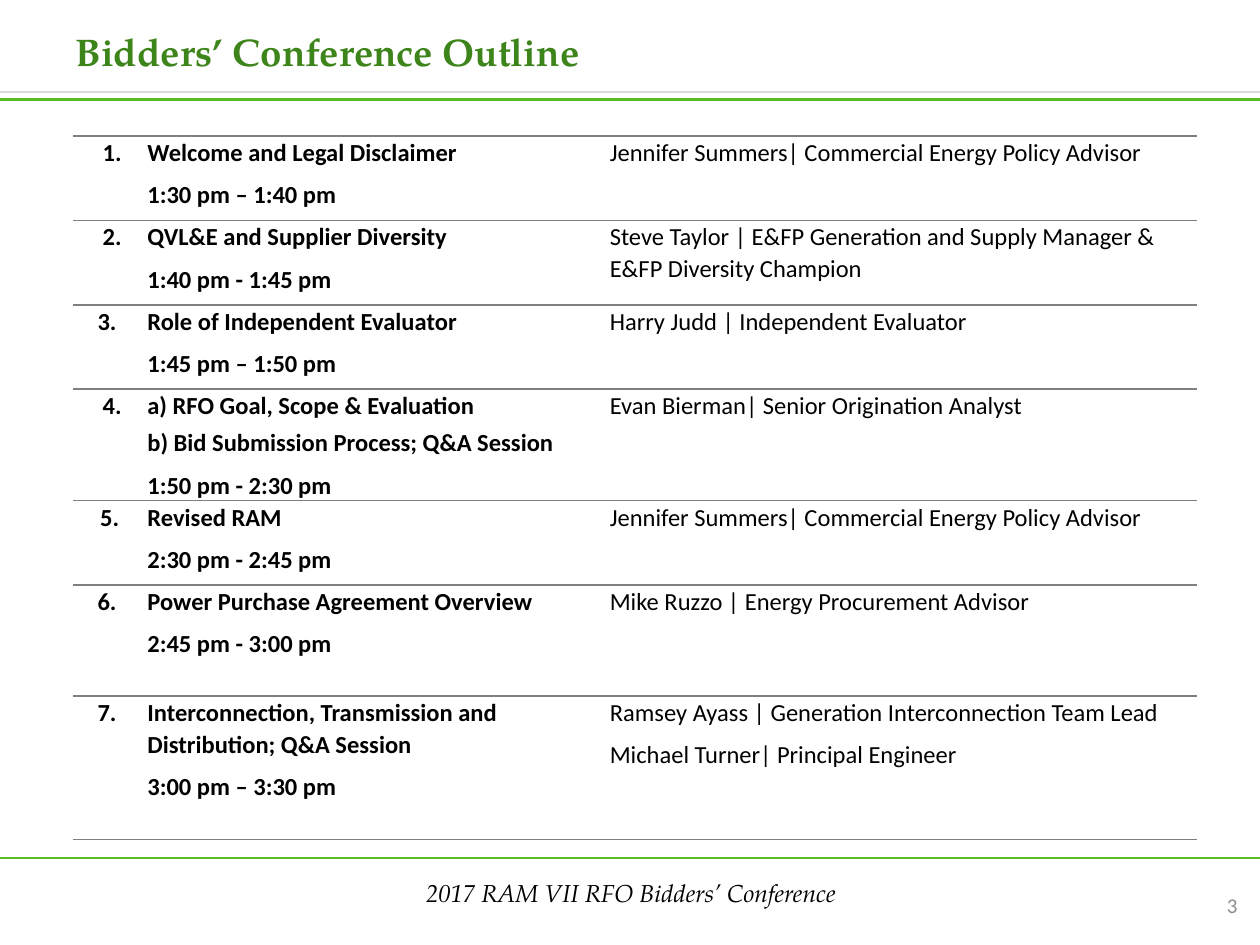
from typing import Any, NamedTuple

from lxml import etree
from pptx import Presentation
from pptx.dml.color import RGBColor
from pptx.enum.shapes import MSO_CONNECTOR
from pptx.enum.text import MSO_ANCHOR, MSO_AUTO_SIZE, PP_ALIGN
from pptx.oxml.ns import qn
from pptx.util import Inches, Pt

STRAIGHT = MSO_CONNECTOR.STRAIGHT
TOP, MIDDLE = MSO_ANCHOR.TOP, MSO_ANCHOR.MIDDLE
LEFT, CENTER, RIGHT = PP_ALIGN.LEFT, PP_ALIGN.CENTER, PP_ALIGN.RIGHT
NO_FIT = MSO_AUTO_SIZE.NONE

WIDTH, HEIGHT = Inches(10), Inches(7.5)
COLORS = {
    "title": "3D841A", "green": "58BD25", "silver": "D9D9D9",
    "rule": "7F7F7F", "number": "8C8C8C", "text": "000000",
}
SERIF, SANS = "TeX Gyre Pagella", "Calibri"
NO_STYLE = "{2D5ABB26-0587-4C30-8999-92F81FD0307C}"
TITLE = {"name": SERIF, "size": Pt(22), "bold": True, "italic": False}
FOOTER = {"name": SERIF, "size": Pt(14), "bold": False, "italic": True}
PAGE_NUMBER = {"name": SANS, "size": Pt(12), "bold": False}
STRONG = {"name": SANS, "size": Pt(14), "bold": True}
PLAIN = {**STRONG, "bold": False}


class Line(NamedTuple):
    text: str
    before: float = 3


class Session(NamedTuple):
    number: str
    nudge: float  # inches the number sits right of its column's centre
    height: float
    agenda: list[Line]
    speakers: list[Line]


class Rule(NamedTuple):
    top: float
    color: str
    weight: float


COLUMNS = [0.58, 3.67, 4.67]
SESSIONS = [
    Session("1.", 0.02, 0.67,
            [Line("Welcome and Legal Disclaimer"), Line("1:30 pm – 1:40 pm")],
            [Line("Jennifer Summers| Commercial Energy Policy Advisor")]),
    Session("2.", 0.02, 0.67,
            [Line("QVL&E and Supplier Diversity"), Line("1:40 pm - 1:45 pm")],
            [Line("Steve Taylor | E&FP Generation and Supply Manager & "
                  "E&FP Diversity Champion")]),
    Session("3.", -0.02, 0.67,
            [Line("Role of Independent Evaluator"), Line("1:45 pm – 1:50 pm")],
            [Line("Harry Judd | Independent Evaluator")]),
    Session("4.", 0.02, 0.88,
            [Line("a) RFO Goal, Scope & Evaluation"),
             Line("b) Bid Submission Process; Q&A Session", 0),
             Line("1:50 pm - 2:30 pm")],
            [Line("Evan Bierman| Senior Origination Analyst")]),
    Session("5.", 0, 0.67,
            [Line("Revised RAM"), Line("2:30 pm - 2:45 pm")],
            [Line("Jennifer Summers| Commercial Energy Policy Advisor")]),
    Session("6.", -0.02, 0.88,
            [Line("Power Purchase Agreement Overview"), Line("2:45 pm - 3:00 pm")],
            [Line("Mike Ruzzo | Energy Procurement Advisor")]),
    Session("7.", -0.02, 1.14,
            [Line("Interconnection, Transmission and Distribution; Q&A Session"),
             Line("3:00 pm – 3:30 pm")],
            [Line("Ramsey Ayass | Generation Interconnection Team Lead"),
             Line("Michael Turner| Principal Engineer")]),
]
RULES = [Rule(0.73, "silver", 1.5), Rule(6.81, "green", 1.5), Rule(0.79, "green", 2.25)]


def color(name: str) -> RGBColor:
    return RGBColor.from_string(COLORS[name])


def style(para: Any, font: dict, ink: str, align: Any) -> None:
    para.alignment = align
    for key, value in font.items():
        setattr(para.font, key, value)
    para.font.color.rgb = color(ink)


def fill_box(box: Any, place: tuple, text: str, font: dict, ink: str,
             align: Any, anchor: Any) -> None:
    """Place a one-line box and format its text without a bullet."""
    for key, value in zip(("left", "top", "width", "height"), place):
        setattr(box, key, Inches(value))
    frame = box.text_frame
    frame.text = text
    frame.word_wrap, frame.auto_size = True, NO_FIT
    frame.vertical_anchor = anchor
    para = frame.paragraphs[0]
    properties = para._p.get_or_add_pPr()
    properties.set("marL", "0")
    properties.set("indent", "0")
    etree.SubElement(properties, qn("a:buNone"))
    para.space_before = Pt(0)
    style(para, font, ink, align)


def draw_rule(page: Any, rule: Rule) -> None:
    top = Inches(rule.top)
    line = page.shapes.add_connector(STRAIGHT, 0, top, WIDTH, top)
    line.line.color.rgb = color(rule.color)
    line.line.width = Pt(rule.weight)
    etree.SubElement(line._element.spPr, qn("a:effectLst"))


def border_cell(cell: Any) -> None:
    """Rule the cell above and below only."""
    properties = cell._tc.get_or_add_tcPr()
    for side in ("a:lnT", "a:lnB"):
        line = etree.SubElement(properties, qn(side), w=str(Pt(1)))
        solid = etree.SubElement(line, qn("a:solidFill"))
        etree.SubElement(solid, qn("a:srgbClr"), val=COLORS["rule"])
    cell.fill.background()


def write_cell(cell: Any, lines: list[Line], font: dict, align: Any = LEFT,
               nudge: float = 0, after: float = 3) -> None:
    cell.margin_left = Inches(0.01 + max(0, 2 * nudge))
    cell.margin_right = Inches(0.01 + max(0, -2 * nudge))
    cell.margin_top = cell.margin_bottom = 0
    border_cell(cell)
    frame = cell.text_frame
    for index, line in enumerate(lines):
        para = frame.add_paragraph() if index else frame.paragraphs[0]
        para.text = line.text
        para.line_spacing = 1.07
        para.space_before = Pt(line.before if index else 0)
        para.space_after = Pt(after)
        style(para, font, "text", align)


def draw_agenda(page: Any) -> None:
    height = sum(session.height for session in SESSIONS)
    frame = page.shapes.add_table(len(SESSIONS), len(COLUMNS), Inches(0.58), Inches(1.08),
                                  Inches(sum(COLUMNS)), Inches(height))
    table = frame.table
    table.first_row = table.horz_banding = False
    table._tbl.tblPr.find(qn("a:tableStyleId")).text = NO_STYLE
    for column, width in zip(table.columns, COLUMNS):
        column.width = Inches(width)
    for row, session in zip(table.rows, SESSIONS):
        row.height = Inches(session.height)
        number, agenda, speakers = row.cells
        write_cell(number, [Line(session.number)], STRONG, CENTER, session.nudge, 0)
        write_cell(agenda, session.agenda, STRONG)
        write_cell(speakers, session.speakers, PLAIN)


def main() -> None:
    deck = Presentation()
    deck.slide_width, deck.slide_height = WIDTH, HEIGHT
    page = deck.slides.add_slide(deck.slide_layouts[1])
    for rule in RULES:
        draw_rule(page, rule)
    fill_box(page.shapes.title, (0.5, 0.17, 9, 0.58), "Bidders’ Conference Outline",
             TITLE, "title", LEFT, TOP)
    fill_box(page.placeholders[1], (1.71, 6.92, 6.6, 0.42),
             "2017 RAM VII RFO Bidders’ Conference", FOOTER, "text", CENTER, TOP)
    number = page.shapes.add_textbox(0, 0, 0, 0)
    fill_box(number, (7.59, 6.98, 2.33, 0.4), "3", PAGE_NUMBER, "number", RIGHT, MIDDLE)
    draw_agenda(page)
    deck.save("out.pptx")


if __name__ == "__main__":
    main()
